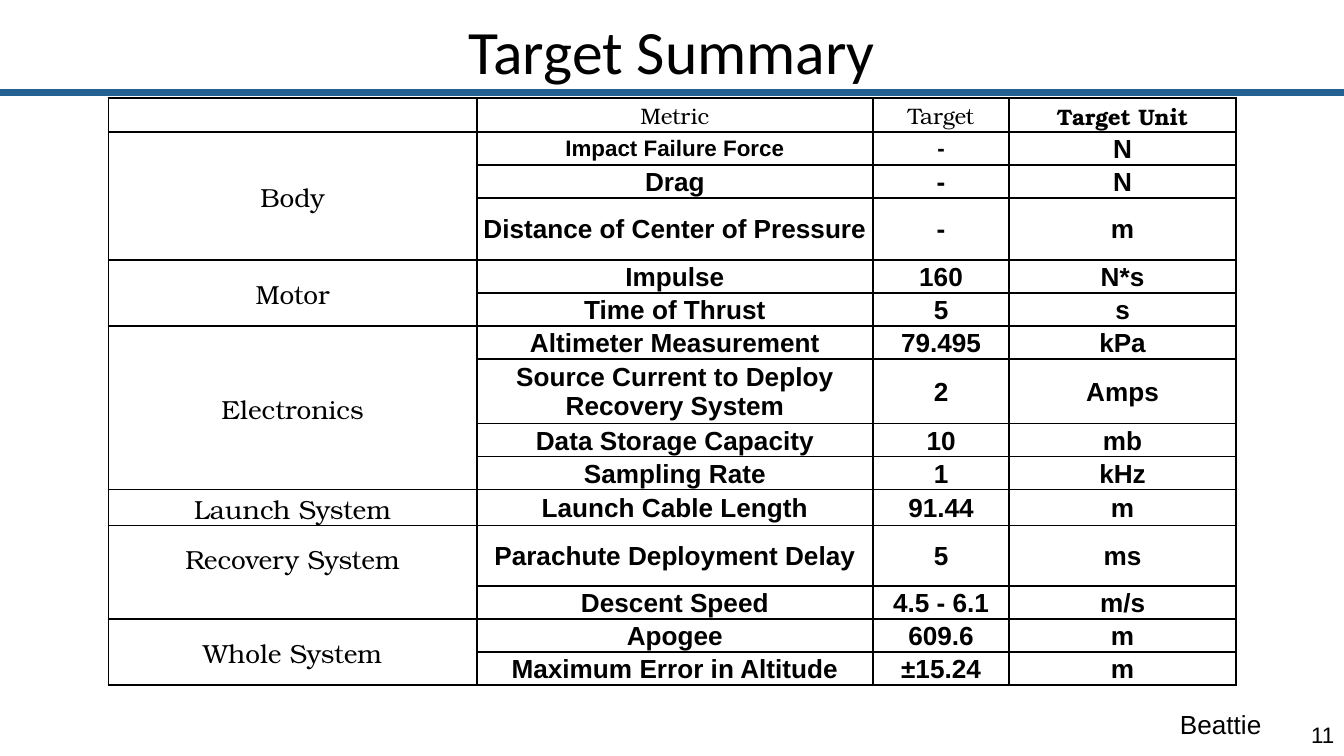
from lxml import etree
from pptx import Presentation
from pptx.dml.color import RGBColor
from pptx.enum import shapes, text
from pptx.oxml import ns
from pptx.util import Cm, Pt

BLACK = RGBColor(0x00, 0x00, 0x00)
WHITE = RGBColor(0xFF, 0xFF, 0xFF)
BLUE = RGBColor(0x23, 0x61, 0x92)
SERIF, SANS = "TeX Gyre Bonum", "Arial"

HEADERS = ["", "Metric", "Target", "Target Unit"]
# Subsystem: its metrics as (name, target, unit)
TARGETS = {
    "Body": [("Impact Failure Force", "-", "N"), ("Drag", "-", "N"),
             ("Distance of Center of Pressure", "-", "m")],
    "Motor": [("Impulse", "160", "N*s"), ("Time of Thrust", "5", "s")],
    "Electronics": [("Altimeter Measurement", "79.495", "kPa"),
                    ("Source Current to Deploy Recovery System", "2", "Amps"),
                    ("Data Storage Capacity", "10", "mb"),
                    ("Sampling Rate", "1", "kHz")],
    "Launch System": [("Launch Cable Length", "91.44", "m")],
    "Recovery System": [("Parachute Deployment Delay", "5", "ms"),
                        ("Descent Speed", "4.5 - 6.1", "m/s")],
    "Whole System": [("Apogee", "609.6", "m"),
                     ("Maximum Error in Altitude", "±15.24", "m")],
}
COLUMN_WIDTHS = [6.96, 7.49, 2.57, 4.29]
ROW_HEIGHT = 0.61
SPECIAL_HEIGHTS = {0: 0.64, 3: 1.18, 7: 1.18, 10: 0.68, 11: 1.14}


def apply(target, **values):
    for name, value in values.items():
        setattr(target, name, value)


def write(para, words, size, font=SANS, bold=False,
          align=text.PP_ALIGN.CENTER):
    para.alignment = align
    span = para.add_run()
    span.text = words
    apply(span.font, size=Pt(size), name=font, bold=bold)
    span.font.color.rgb = BLACK


def add_text(page, place, words, margins, anchor=text.MSO_ANCHOR.TOP,
             **style):
    box = page.shapes.add_textbox(*map(Cm, place))
    side, end = map(Cm, margins)
    apply(box.text_frame, word_wrap=True, vertical_anchor=anchor,
          margin_left=side, margin_right=side,
          margin_top=end, margin_bottom=end)
    write(box.text_frame.paragraphs[0], words, **style)


def add_rule(page, left, top, right, bottom):
    rule = page.shapes.add_connector(
        shapes.MSO_CONNECTOR.STRAIGHT, *map(Cm, (left, top, right, bottom)))
    rule.line.color.rgb = BLUE
    rule.line.width = Pt(3.5)
    etree.SubElement(rule._element.spPr, ns.qn("a:effectLst"))


def border_cell(cell):
    properties = cell._tc.get_or_add_tcPr()
    for place, side in enumerate(("lnL", "lnR", "lnT", "lnB")):
        line = etree.Element(ns.qn(f"a:{side}"), w=str(Pt(1)))
        fill = etree.SubElement(line, ns.qn("a:solidFill"))
        etree.SubElement(fill, ns.qn("a:srgbClr"), val=str(BLACK))
        properties.insert(place, line)


def format_cell(cell):
    apply(cell, vertical_anchor=text.MSO_ANCHOR.MIDDLE, margin_left=Cm(0.03),
          margin_right=Cm(0.03), margin_top=Cm(0.03), margin_bottom=0)
    cell.fill.solid()
    cell.fill.fore_color.rgb = WHITE
    border_cell(cell)


def fill_cell(cell, words, size=14, **style):
    para = cell.text_frame.paragraphs[0]
    if words:
        write(para, words, size, **style)
    else:
        # Keeps an empty cell from stretching its row
        etree.SubElement(para._p, ns.qn("a:endParaRPr"), sz=str(size * 100))


def add_target_table(page):
    row_count = 1 + sum(map(len, TARGETS.values()))
    frame = page.shapes.add_table(
        row_count, len(HEADERS), Cm(2.05), Cm(1.85),
        Cm(sum(COLUMN_WIDTHS)), Cm(10.92))
    table = frame.table
    apply(table, first_row=False, horz_banding=False)
    for column, width in zip(table.columns, COLUMN_WIDTHS):
        column.width = Cm(width)
    for index, row in enumerate(table.rows):
        row.height = Cm(SPECIAL_HEIGHTS.get(index, ROW_HEIGHT))
        for cell in row.cells:
            format_cell(cell)

    # Header row
    for column, words in enumerate(HEADERS):
        fill_cell(table.cell(0, column), words, 12, font=SERIF,
                  bold=words == "Target Unit")

    # One merged subsystem cell beside each group of metrics
    first = 1
    for system, metrics in TARGETS.items():
        last = first + len(metrics) - 1
        label = table.cell(first, 0)
        fill_cell(label, system, font=SERIF)
        for index, values in enumerate(metrics, first):
            if index > first:
                fill_cell(table.cell(index, 0), "", 12)
            for column, words in enumerate(values, 1):
                small = index == 1 and column < 3
                fill_cell(table.cell(index, column), words,
                          12 if small else 14, bold=True)
        if last > first:
            label.merge(table.cell(last, 0))
        if system == "Recovery System":
            label.margin_bottom = Cm(0.55)
        first = last + 1


def main():
    deck = Presentation()
    apply(deck, slide_width=Cm(25.4), slide_height=Cm(14.29))
    page = deck.slides.add_slide(deck.slide_layouts[6])

    # Heading
    add_rule(page, 0, 1.75, 25.4, 1.75)
    add_text(page, (0.86, 0, 23.67, 1.6), "Target Summary", (0.25, 0.25),
             size=33, font="Calibri")

    # Targets
    add_target_table(page)

    # Footer
    add_text(page, (22.05, 13.26, 2.36, 0.86), "Beattie", (0.25, 0.13),
             size=14, align=text.PP_ALIGN.LEFT)
    add_text(page, (24.13, 13.51, 1.27, 0.76), "11", (0.18, 0.1),
             anchor=text.MSO_ANCHOR.MIDDLE, size=12,
             align=text.PP_ALIGN.RIGHT)

    deck.save("out.pptx")


if __name__ == "__main__":
    main()
